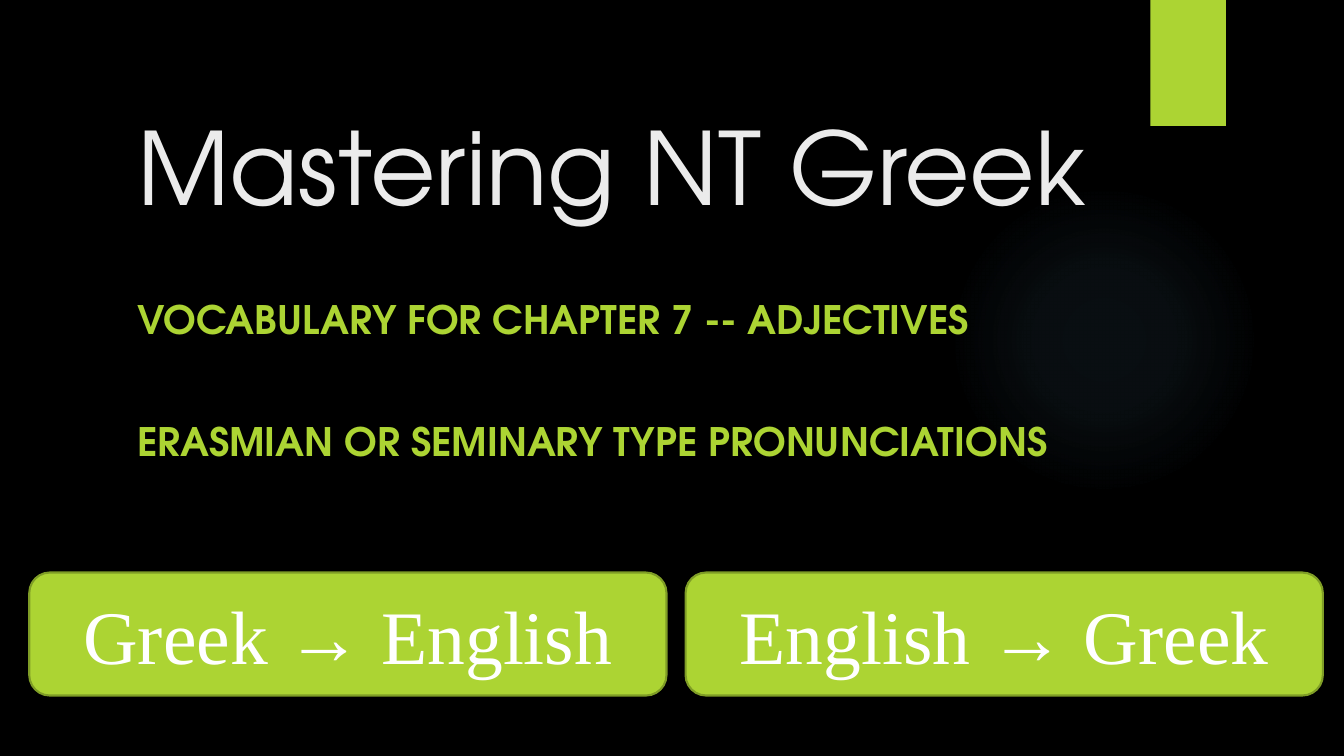
from lxml import etree
from pptx import Presentation, util as u
from pptx.dml import color
from pptx.enum import shapes, text
from pptx.oxml import ns

LIME, SKY = "ACD433", "7AC4F0"
SANS, SERIF = "TeX Gyre Adventor", "Times New Roman"


def rgb(code):
    return color.RGBColor.from_string(code)


def style(para, face, size, tint, bold=False, align=text.PP_ALIGN.LEFT):
    para.alignment = align
    para.line_spacing = 1.0
    for run in para.runs:
        run.font.name = face
        run.font.size = u.Pt(size)
        run.font.bold = bold
        run.font.color.rgb = rgb(tint)


deck = Presentation()
deck.slide_width, deck.slide_height = u.Inches(13.33), u.Inches(7.5)
slide = deck.slides.add_slide(deck.slide_layouts[0])
back = slide.background.fill
back.solid()
back.fore_color.rgb = rgb("000000")

decor = []
for kind, box in (
    (shapes.MSO_SHAPE.OVAL, (9.41, 1.83, 3.08, 3.08)),
    (shapes.MSO_SHAPE.RECTANGLE, (11.41, 0, 0.75, 1.25)),
):
    item = slide.shapes.add_shape(kind, *map(u.Inches, box))
    item.shadow.inherit = False
    item.line.fill.background()
    decor.append(item)
glow, tab = decor
tab.fill.solid()
tab.fill.fore_color.rgb = rgb(LIME)

stops = "".join(
    f'<a:gs pos="{pos}000"><a:srgbClr val="{SKY}"><a:alpha val="{alpha}000"/></a:srgbClr></a:gs>'
    for pos, alpha in ((0, 7), (36, 6), (69, 0))
)
grad = etree.fromstring(
    f'<a:gradFill {ns.nsdecls("a")} rotWithShape="1"><a:gsLst>{stops}</a:gsLst>'
    '<a:path path="circle"><a:fillToRect l="50000" t="50000" r="50000" b="50000"/></a:path></a:gradFill>'
)
glow.element.spPr.find(ns.qn("a:prstGeom")).addnext(grad)
for item in reversed(decor):
    slide.shapes.element.insert(2, item.element)

title, sub = slide.placeholders
for holder, box, words, anchor in (
    (title, (1.26, 0.7, 10.04, 1.59), "Mastering NT Greek", text.MSO_ANCHOR.BOTTOM),
    (sub, (1.26, 2.88, 10.43, 2.69),
     "VOCABULARY FOR CHAPTER 7 -- ADJECTIVES\nERASMIAN OR SEMINARY TYPE PRONUNCIATIONS",
     text.MSO_ANCHOR.TOP),
):
    holder.left, holder.top, holder.width, holder.height = map(u.Inches, box)
    frame = holder.text_frame
    frame.text = words
    frame.word_wrap = True
    frame.auto_size = text.MSO_AUTO_SIZE.NONE
    frame.vertical_anchor = anchor
style(title.text_frame.paragraphs[0], SANS, 72, "EBEBEB")
for para, gap in zip(sub.text_frame.paragraphs, (0, 53.5)):
    style(para, SANS, 28, LIME, True)
    para.space_before = u.Pt(gap)

for col, words in enumerate(("Greek → English", "English → Greek")):
    key = slide.shapes.add_shape(
        shapes.MSO_SHAPE.ROUNDED_RECTANGLE,
        *map(u.Inches, (0.29 + col * 6.51, 5.68, 6.32, 1.22)),
    )
    key.shadow.inherit = False
    key.fill.solid()
    key.fill.fore_color.rgb = rgb(LIME)
    key.line.color.rgb = rgb("7F9D26")
    key.line.width = u.Pt(1.5)
    key.text_frame.text = words
    key.text_frame.word_wrap = True
    key.text_frame.vertical_anchor = text.MSO_ANCHOR.MIDDLE
    style(key.text_frame.paragraphs[0], SERIF, 54, "FFFFFF", align=text.PP_ALIGN.CENTER)

deck.save("out.pptx")
